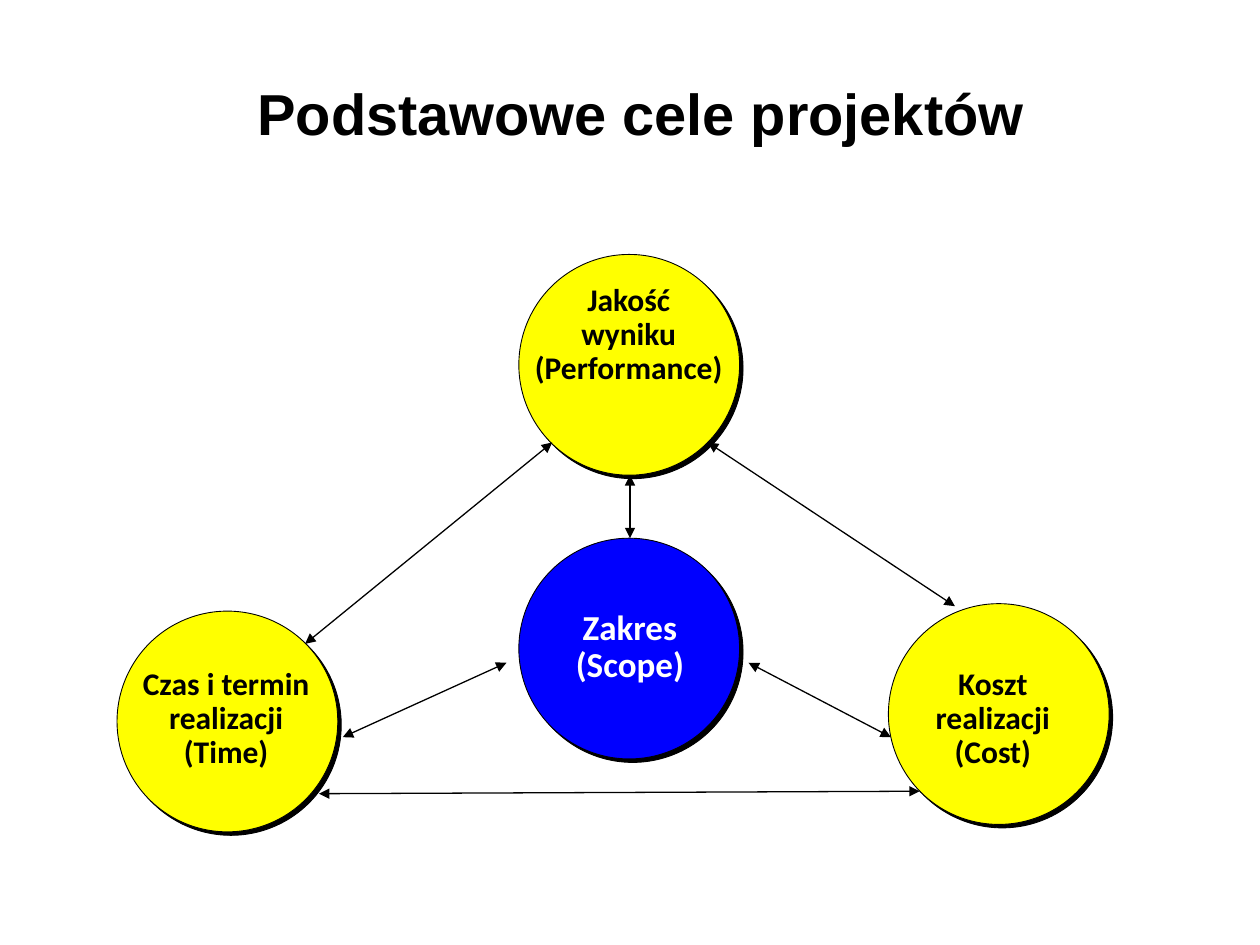
from lxml import etree
from pptx import Presentation
from pptx.dml.color import RGBColor
from pptx.enum import shapes, text
from pptx.oxml import ns
from pptx.util import Cm, Pt

BLACK, WHITE, YELLOW, BLUE = "000000", "FFFFFF", "FFFF00", "0000FF"
DIAMETER = 4.45

# circle left, top; fill; label left, top, width, height; size; colour; lines
GOALS = [
    ((10.46, 5.13), YELLOW, (10.34, 5.61, 4.67, 2.41), 18, BLACK,
     ["Jakość", "wyniku", "(Performance)"]),
    ((2.36, 12.32), YELLOW, (2.39, 13.34, 4.34, 2.41), 18, BLACK,
     ["Czas i termin", "realizacji", "(Time)"]),
    ((17.91, 12.17), YELLOW, (18.44, 13.34, 3.15, 2.41), 18, BLACK,
     ["Koszt", "realizacji", "(Cost)"]),
    ((10.46, 10.85), BLUE, (11.33, 12.17, 2.74, 1.78), 20, WHITE,
     ["Zakres", "(Scope)"]),
]

# start x, y, end x, y
ARROWS = [
    (6.43, 16.0, 18.54, 15.95),
    (15.09, 13.36, 17.96, 14.86),
    (10.21, 13.36, 6.91, 14.86),
    (12.7, 10.85, 12.7, 9.58),
    (6.15, 12.98, 11.13, 8.92),
    (14.27, 8.92, 19.25, 12.22),
]


def color(value):
    return RGBColor.from_string(value)


def add_child(parent, tag, **attributes):
    return etree.SubElement(parent, ns.qn(tag), attributes)


def add_text(slide, box, lines, font, size, font_color, spacing=None):
    """Add a centred bold text box with one paragraph per line."""
    shape = slide.shapes.add_textbox(*map(Cm, box))
    frame = shape.text_frame
    for index, line in enumerate(lines):
        paragraph = frame.add_paragraph() if index else frame.paragraphs[0]
        paragraph.alignment = text.PP_ALIGN.CENTER
        paragraph.line_spacing = spacing
        run = paragraph.add_run()
        run.text = line
        run.font.name = font
        run.font.size = Pt(size)
        run.font.bold = True
        run.font.color.rgb = color(font_color)
    return frame


def add_title(slide):
    frame = add_text(slide, (3.89, 1.32, 18.06, 1.9),
                     ["Podstawowe cele projektów"], "Arial", 33, BLACK)
    frame.word_wrap = True
    frame.vertical_anchor = text.MSO_ANCHOR.MIDDLE


def add_circle(slide, position, fill):
    """Add an outlined circle with a hard shadow to the lower right."""
    left, top = position
    shape = slide.shapes.add_shape(shapes.MSO_SHAPE.OVAL, Cm(left), Cm(top),
                                   Cm(DIAMETER), Cm(DIAMETER))
    shape.fill.solid()
    shape.fill.fore_color.rgb = color(fill)
    shape.line.color.rgb = color(BLACK)
    shape.line.width = Pt(0.5)
    shape.shadow.inherit = False
    effects = shape.element.spPr.find(ns.qn("a:effectLst"))
    shadow = add_child(effects, "a:outerShdw", dist=str(Pt(2.8)),
                       dir=str(45 * 60000), algn="ctr", rotWithShape="0")
    add_child(shadow, "a:srgbClr", val=BLACK)


def add_label(slide, box, lines, size, font_color):
    frame = add_text(slide, box, lines, "Calibri", size, font_color, 0.9)
    frame.word_wrap = False
    frame.auto_size = text.MSO_AUTO_SIZE.SHAPE_TO_FIT_TEXT


def add_double_arrow(slide, ends):
    connector = slide.shapes.add_connector(
        shapes.MSO_CONNECTOR.STRAIGHT, *map(Cm, ends))
    connector.line.color.rgb = color(BLACK)
    connector.line.width = Pt(0.75)
    properties = connector.element.spPr
    line = properties.find(ns.qn("a:ln"))
    for tag in ("a:headEnd", "a:tailEnd"):
        add_child(line, tag, type="triangle")
    add_child(properties, "a:effectLst")


def main():
    presentation = Presentation()
    presentation.slide_width = Cm(25.4)
    presentation.slide_height = Cm(19.05)
    slide = presentation.slides.add_slide(presentation.slide_layouts[6])
    add_title(slide)
    for position, fill, box, size, font_color, lines in GOALS:
        add_circle(slide, position, fill)
        add_label(slide, box, lines, size, font_color)
    for ends in ARROWS:
        add_double_arrow(slide, ends)
    presentation.save("out.pptx")


if __name__ == "__main__":
    main()
